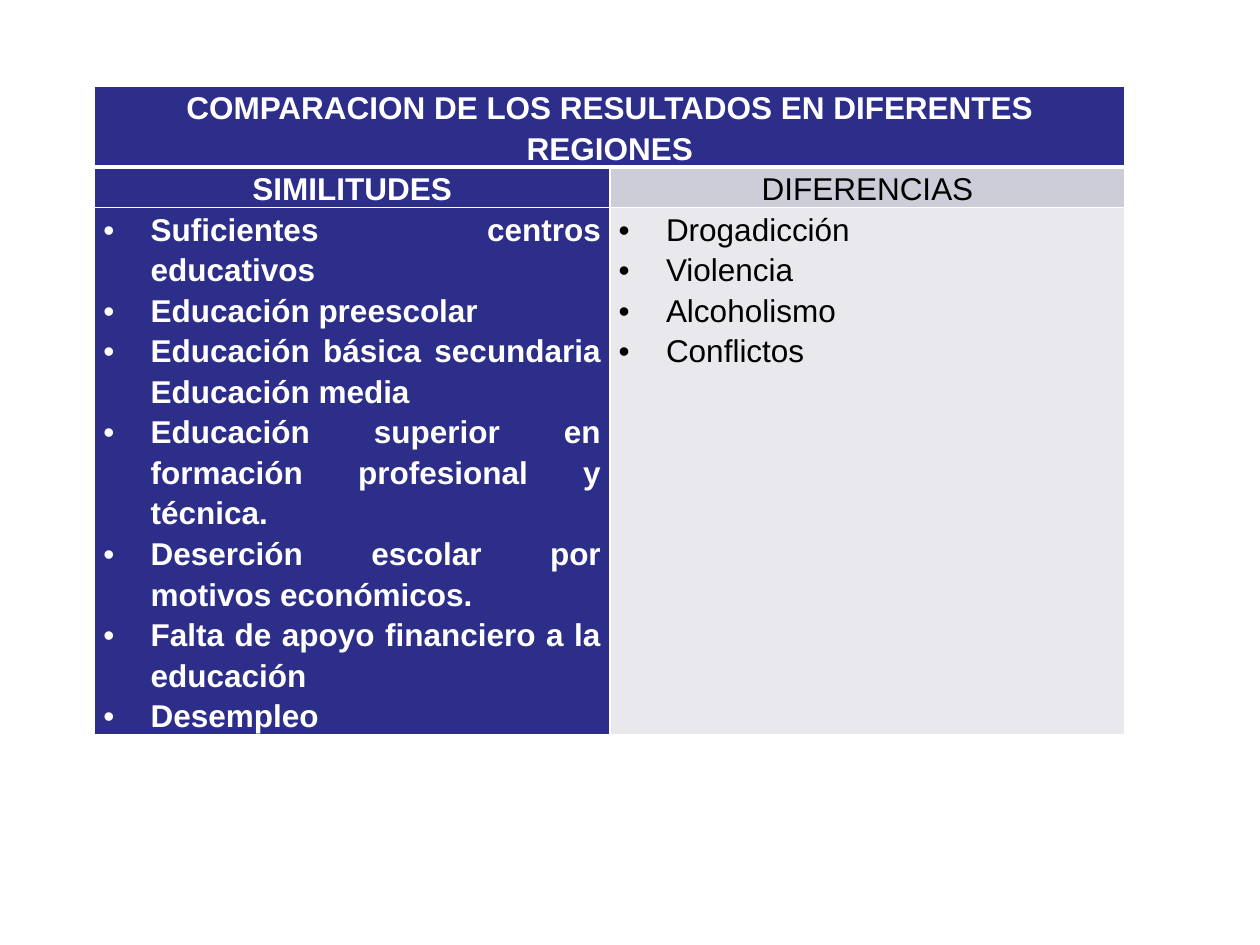
from lxml.etree import SubElement as Sub
from pptx import Presentation
from pptx.dml.color import RGBColor
from pptx.enum.text import PP_ALIGN as Align
from pptx.oxml.ns import qn
from pptx.util import Pt

NAVY, WHITE, BLACK = "2D2D8A", "FFFFFF", "000000"
ALIKE = [
    "Suficientes centros educativos",
    "Educación preescolar",
    "Educación básica secundaria Educación media",
    "Educación superior en formación profesional y técnica.",
    "Deserción escolar por motivos económicos.",
    "Falta de apoyo financiero a la educación",
    "Desempleo",
]
OTHER = ["Drogadicción", "Violencia", "Alcoholismo", "Conflictos"]


def color(hex):
    return RGBColor.from_string(hex)


class Deck:
    """Holds the style and the current slide, and draws its elements."""

    font, size, space = "Arial", 18, 1.15
    inset, indent = 5.1, 27

    def __init__(self, wide, high):
        self.prs = Presentation()
        self.prs.slide_width, self.prs.slide_height = Pt(wide), Pt(high)
        self.slide = self.prs.slides.add_slide(self.prs.slide_layouts[6])

    def table(self, left, top, cols, rows):
        frame = self.slide.shapes.add_table(
            len(rows), len(cols), Pt(left), Pt(top), Pt(sum(cols)), Pt(sum(rows)))
        grid = frame.table
        for col, wide in zip(grid.columns, cols):
            col.width = Pt(wide)
        for row, high in zip(grid.rows, rows):
            row.height = Pt(high)
        return grid

    def border(self, cell, top, bottom):
        props = cell._tc.get_or_add_tcPr()
        for side, width in zip("LRTB", (1, 1, top, bottom)):
            line = Sub(props, qn("a:ln" + side), w=str(Pt(width)))
            fill = Sub(line, qn("a:solidFill"))
            Sub(fill, qn("a:srgbClr"), val=WHITE)

    def bullet(self, para):
        props = para._p.get_or_add_pPr()
        props.set("marL", str(Pt(self.indent)))
        props.set("indent", str(-Pt(self.indent)))
        Sub(props, qn("a:buFont"), typeface=self.font)
        Sub(props, qn("a:buChar"), char="•")

    def cell(self, cell, lines, fill, ink, bold, align=Align.CENTER,
             listed=False, top=1, bottom=1):
        self.border(cell, top, bottom)
        cell.fill.solid()
        cell.fill.fore_color.rgb = color(fill)
        cell.margin_left = cell.margin_right = Pt(self.inset)
        cell.margin_top = cell.margin_bottom = Pt(0)
        frame = cell.text_frame
        for i, line in enumerate(lines):
            para = frame.add_paragraph() if i else frame.paragraphs[0]
            para.alignment, para.line_spacing = align, self.space
            if listed:
                self.bullet(para)
            run = para.add_run()
            run.text = line
            font = run.font
            font.name, font.size, font.bold = self.font, Pt(self.size), bold
            font.color.rgb = color(ink)


def main():
    deck = Deck(720, 540)
    grid = deck.table(54, 49, [294.5, 294.5], [46, 23, 300])
    head = grid.cell(0, 0)
    head.merge(grid.cell(0, 1))
    deck.cell(head, ["COMPARACION DE LOS RESULTADOS EN DIFERENTES REGIONES"],
              NAVY, WHITE, True, bottom=3)
    deck.border(grid.cell(0, 1), 1, 3)
    sides = [
        ("SIMILITUDES", ALIKE, NAVY, NAVY, WHITE, True),
        ("DIFERENCIAS", OTHER, "CDCDDA", "E8E8ED", BLACK, False),
    ]
    for col, (title, items, dark, light, ink, bold) in enumerate(sides):
        deck.cell(grid.cell(1, col), [title], dark, ink, bold, top=3)
        deck.cell(grid.cell(2, col), items, light, ink, bold, Align.JUSTIFY, True)
    deck.prs.save("out.pptx")


if __name__ == "__main__":
    main()
